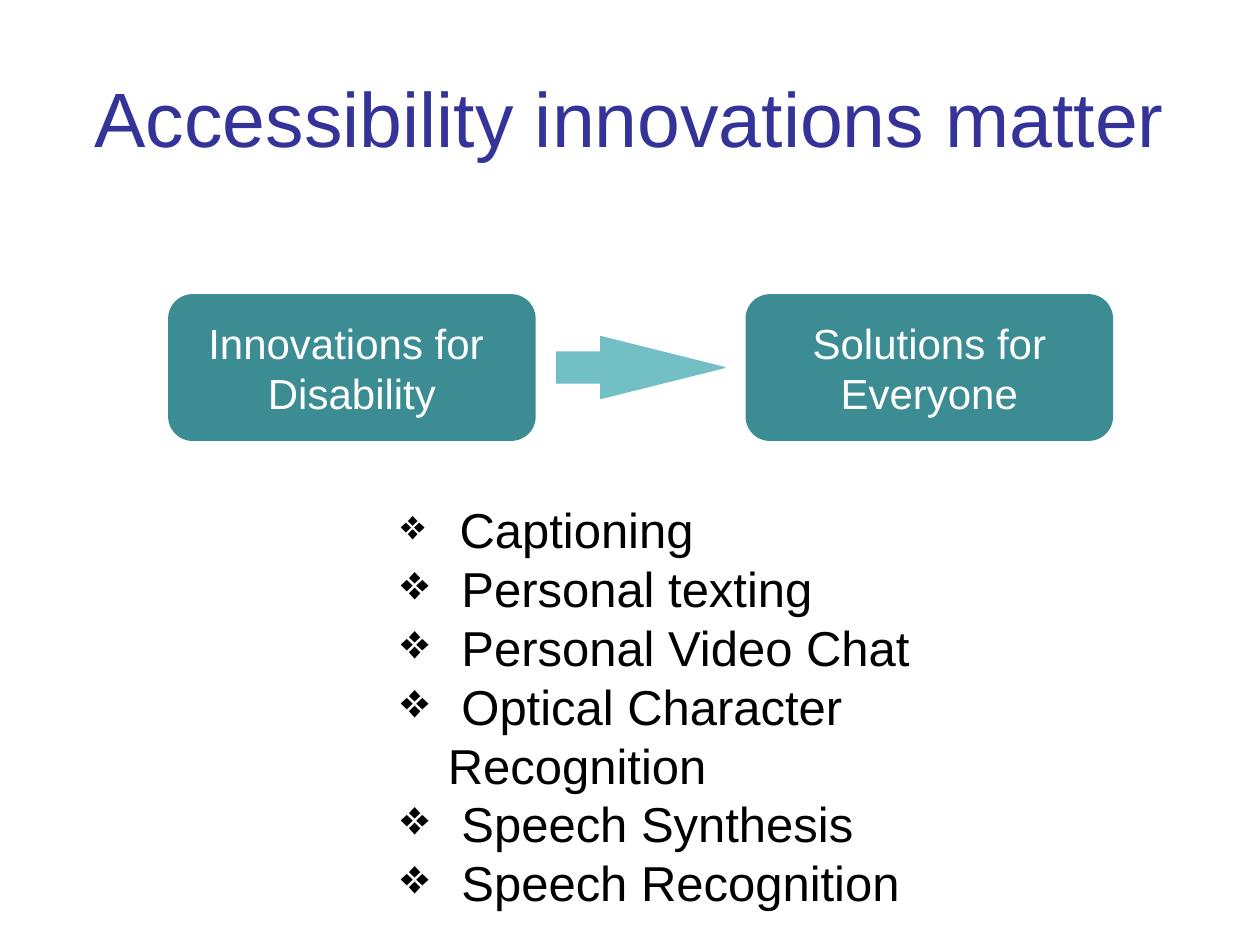
from dataclasses import dataclass

from lxml.etree import SubElement
from pptx import Presentation
from pptx.dml.color import RGBColor
from pptx.enum.shapes import MSO_SHAPE
from pptx.enum.text import MSO_ANCHOR, MSO_AUTO_SIZE, PP_ALIGN
from pptx.oxml.ns import qn
from pptx.util import Cm, Pt


@dataclass(frozen=True)
class Theme:
    font: str = "Arial"
    title_color: str = "333399"
    box_color: str = "3C8C93"
    box_text: str = "FFFFFF"
    arrow_color: str = "72BFC5"
    list_color: str = "000000"
    title_size: int = 44
    box_size: int = 24
    list_size: int = 28
    first_bullet_size: int = 24


class SlideBuilder:
    def __init__(self, slide, theme):
        self.slide = slide
        self.theme = theme

    def style(self, span, size, color):
        span.font.name = self.theme.font
        span.font.size = Pt(size)
        span.font.color.rgb = RGBColor.from_string(color)

    def fill_text(self, frame, text, size, color):
        frame.text = text
        frame.vertical_anchor = MSO_ANCHOR.MIDDLE
        for para in frame.paragraphs:
            para.alignment = PP_ALIGN.CENTER
            for span in para.runs:
                self.style(span, size, color)

    def title(self, text, left, top, width, height):
        box = self.slide.shapes.add_textbox(Cm(left), Cm(top), Cm(width), Cm(height))
        box.text_frame.word_wrap = True
        self.fill_text(box.text_frame, text, self.theme.title_size, self.theme.title_color)

    def shape(self, kind, left, top, width, height, color):
        shape = self.slide.shapes.add_shape(kind, Cm(left), Cm(top), Cm(width), Cm(height))
        shape.shadow.inherit = False
        shape.fill.solid()
        shape.fill.fore_color.rgb = RGBColor.from_string(color)
        return shape

    def rounded_box(self, text, left, top, width, height):
        box = self.shape(MSO_SHAPE.ROUNDED_RECTANGLE, left, top, width, height,
                         self.theme.box_color)
        box.line.fill.background()
        box.text_frame.word_wrap = False
        self.fill_text(box.text_frame, text, self.theme.box_size, self.theme.box_text)

    def arrow(self, left, top, width, height):
        arrow = self.shape(MSO_SHAPE.RIGHT_ARROW, left, top, width, height,
                           self.theme.arrow_color)
        arrow.adjustments[1] = 2
        arrow.line.color.rgb = RGBColor.from_string(self.theme.arrow_color)
        arrow.line.width = Pt(0.75)

    def bullet_list(self, items, left, top, width, height, indent):
        box = self.slide.shapes.add_textbox(Cm(left), Cm(top), Cm(width), Cm(height))
        frame = box.text_frame
        frame.word_wrap = True
        frame.auto_size = MSO_AUTO_SIZE.SHAPE_TO_FIT_TEXT
        frame.text = "\n".join(f" {item}" for item in items)
        for para in frame.paragraphs:
            properties = para._p.get_or_add_pPr()
            properties.set("marL", str(Cm(indent)))
            properties.set("indent", str(-Cm(indent)))
            SubElement(properties, qn("a:buChar"), char="❖")
            self.style(para.runs[0], self.theme.list_size, self.theme.list_color)

        # The bullet takes the size of the first run, smaller in the first item
        first = frame.paragraphs[0]
        first.text = " "
        first.add_run().text = items[0]
        sizes = (self.theme.first_bullet_size, self.theme.list_size)
        for span, size in zip(first.runs, sizes):
            self.style(span, size, self.theme.list_color)


def main():
    deck = Presentation()
    deck.slide_width, deck.slide_height = Cm(25.4), Cm(19.05)
    page = SlideBuilder(deck.slides.add_slide(deck.slide_layouts[6]), Theme())

    # Title
    page.title("Accessibility innovations matter", 1.27, 0.76, 22.86, 3.18)

    # Two boxes, with the arrow centred in the gap between them
    left, top, width, height, pitch = 3.39, 5.93, 7.41, 2.96, 11.64
    labels = ["Innovations for \nDisability", "Solutions for\nEveryone"]
    for index, label in enumerate(labels):
        page.rounded_box(label, left + index * pitch, top, width, height)
    arrow_width, arrow_height = 3.39, 1.25
    page.arrow(left + (width + pitch - arrow_width) / 2,
               top + (height - arrow_height) / 2, arrow_width, arrow_height)

    # Examples
    page.bullet_list(
        ["Captioning", "Personal texting", "Personal Video Chat",
         "Optical Character Recognition", "Speech Synthesis", "Speech Recognition"],
        7.83, 9.95, 14.6, 8.64, indent=0.95)

    deck.save("out.pptx")


if __name__ == "__main__":
    main()
